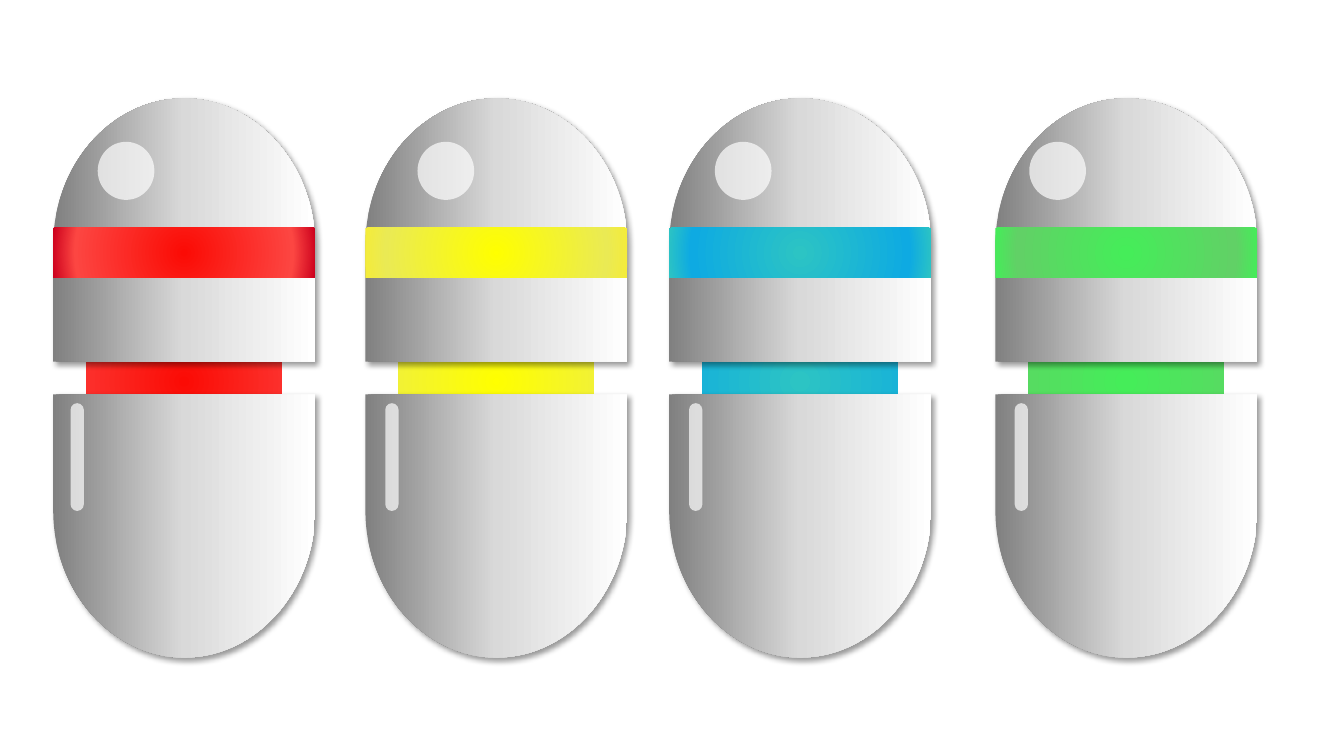
from dataclasses import dataclass

from lxml.etree import SubElement
from pptx import Presentation
from pptx.dml.color import RGBColor
from pptx.enum.shapes import MSO_SHAPE
from pptx.oxml import parse_xml
from pptx.oxml.ns import nsdecls, qn
from pptx.shapes.autoshape import Shape
from pptx.shapes.shapetree import GroupShapes, SlideShapes
from pptx.util import Pt

Stops = tuple[tuple[int, str], ...]

# Geometry shared by every capsule, in points
SHELL_WIDTH, SHELL_HEIGHT, DOME_HEIGHT = 187, 188, 105
LID_TOP, BASE_TOP = 70.3, 281.7
CORE_INSET, CORE_TOP, CORE_HEIGHT = 23.7, 158.5, 228
BAND_TOP, BAND_HEIGHT = 162.6, 36
GLINT_TOP, GLINT_WIDTH, GLINT_HEIGHT = 101.3, 40.5, 41.5
STREAK_TOP, STREAK_WIDTH, STREAK_HEIGHT = 288, 9.5, 77
ARC_HANDLE = 0.55  # Bezier handle length of a quarter ellipse

METAL: Stops = ((0, "808080"), (50, "D9D9D9"), (100, "FFFFFF"))
LINEAR = '<a:lin ang="0" scaled="0"/>'
RADIAL = ('<a:path path="circle"><a:fillToRect l="50000" t="50000" '
          'r="50000" b="50000"/></a:path>')


@dataclass(frozen=True)
class Capsule:
    left: float
    glint_offset: float
    streak_offset: float
    stops: Stops


CAPSULES = (
    Capsule(38, 31.8, 12.4, ((0, "FB0B05"), (82, "FC4642"), (100, "CC001D"))),
    Capsule(261, 37.2, 14.2, ((0, "FFFF00"), (83, "EAEA54"), (100, "F5EC39"))),
    Capsule(478, 32.6, 14.2, ((0, "2CC4C4"), (82, "0EAAE2"), (100, "2CC4C4"))),
    Capsule(711, 24.2, 13.8, ((0, "45ED59"), (82, "61D166"), (100, "45ED59"))),
)


def rgb(value: str) -> RGBColor:
    return RGBColor.from_string(value)


def clear_style(shape: Shape) -> None:
    shape.shadow.inherit = False
    shape.line.fill.background()


def fill_gradient(shape: Shape, stops: Stops, direction: str) -> None:
    shape.fill.background()
    stop_xml = "".join(
        f'<a:gs pos="{position * 1000}"><a:srgbClr val="{rgb(color)}"/></a:gs>'
        for position, color in stops)
    gradient = parse_xml(
        f'<a:gradFill {nsdecls("a")} rotWithShape="1">'
        f'<a:gsLst>{stop_xml}</a:gsLst>{direction}</a:gradFill>')
    properties = shape.element.spPr
    properties.replace(properties.find(qn("a:noFill")), gradient)


def cast_shadow(shape: Shape) -> None:
    effects = shape.element.spPr.find(qn("a:effectLst"))
    effects.append(parse_xml(
        f'<a:outerShdw {nsdecls("a")} blurRad="{Pt(4)}" dist="{Pt(3)}" '
        'dir="2700000" algn="tl" rotWithShape="0">'
        f'<a:srgbClr val="{rgb("000000")}"><a:alpha val="40000"/></a:srgbClr>'
        '</a:outerShdw>'))


def add_part(shapes: SlideShapes | GroupShapes, kind: MSO_SHAPE, left: float,
             top: float, width: float, height: float) -> Shape:
    part = shapes.add_shape(kind, Pt(left), Pt(top), Pt(width), Pt(height))
    clear_style(part)
    return part


def curve_segments(shape: Shape, first: int) -> None:
    """Merge three straight segments, from the given one on, into a Bezier."""
    lines = list(shape.element.spPr.iter(qn("a:lnTo")))[first:first + 3]
    curve = parse_xml(f'<a:cubicBezTo {nsdecls("a")}/>')
    lines[0].addprevious(curve)
    for line in lines:
        curve.append(line[0])
        line.getparent().remove(line)


def add_shell(shapes: GroupShapes, left: float, flat_y: float,
              toward_dome: int) -> None:
    """Add a metal half; toward_dome is -1 for a dome on top, 1 for below."""
    radius = SHELL_WIDTH / 2
    right, middle = left + SHELL_WIDTH, left + radius
    peak_y = flat_y + toward_dome * SHELL_HEIGHT
    spring_y = peak_y - toward_dome * DOME_HEIGHT
    handle_x = radius * ARC_HANDLE
    handle_y = spring_y + toward_dome * DOME_HEIGHT * ARC_HANDLE
    corners = (
        (left, spring_y),
        (left, handle_y), (middle - handle_x, peak_y), (middle, peak_y),
        (middle + handle_x, peak_y), (right, handle_y), (right, spring_y),
        (right, flat_y),
    )
    outline = shapes.build_freeform(Pt(left), Pt(flat_y))
    outline.add_line_segments([(Pt(x), Pt(y)) for x, y in corners], close=True)
    shell = outline.convert_to_shape()
    for _ in range(2):
        curve_segments(shell, first=1)
    clear_style(shell)
    fill_gradient(shell, METAL, LINEAR)
    cast_shadow(shell)


def add_highlight(shapes: GroupShapes, kind: MSO_SHAPE, left: float,
                  top: float, width: float, height: float) -> Shape:
    """Add a translucent white reflection."""
    highlight = add_part(shapes, kind, left, top, width, height)
    highlight.fill.solid()
    highlight.fill.fore_color.rgb = rgb("FFFFFF")
    white = highlight.element.spPr.find(qn("a:solidFill")).find(qn("a:srgbClr"))
    SubElement(white, qn("a:alpha")).set("val", "69000")
    return highlight


def add_core(shapes: SlideShapes, capsule: Capsule) -> None:
    core = add_part(shapes, MSO_SHAPE.RECTANGLE, capsule.left + CORE_INSET,
                    CORE_TOP, SHELL_WIDTH - 2 * CORE_INSET, CORE_HEIGHT)
    fill_gradient(core, capsule.stops, RADIAL)


def add_lid(shapes: SlideShapes, capsule: Capsule) -> None:
    lid = shapes.add_group_shape().shapes
    add_shell(lid, capsule.left, LID_TOP + SHELL_HEIGHT, toward_dome=-1)
    band = add_part(lid, MSO_SHAPE.RECTANGLE, capsule.left, BAND_TOP,
                    SHELL_WIDTH, BAND_HEIGHT)
    fill_gradient(band, capsule.stops, RADIAL)
    add_highlight(lid, MSO_SHAPE.OVAL, capsule.left + capsule.glint_offset,
                  GLINT_TOP, GLINT_WIDTH, GLINT_HEIGHT)


def add_base(shapes: SlideShapes, capsule: Capsule) -> None:
    base = shapes.add_group_shape().shapes
    add_shell(base, capsule.left, BASE_TOP, toward_dome=1)
    streak = add_highlight(base, MSO_SHAPE.ROUNDED_RECTANGLE,
                           capsule.left + capsule.streak_offset, STREAK_TOP,
                           STREAK_WIDTH, STREAK_HEIGHT)
    streak.adjustments[0] = 0.5


def main() -> None:
    presentation = Presentation()
    presentation.slide_width, presentation.slide_height = Pt(960), Pt(540)
    slide = presentation.slides.add_slide(presentation.slide_layouts[6])
    for add_layer in (add_core, add_lid, add_base):
        for capsule in CAPSULES:
            add_layer(slide.shapes, capsule)
    presentation.save("out.pptx")


if __name__ == "__main__":
    main()
